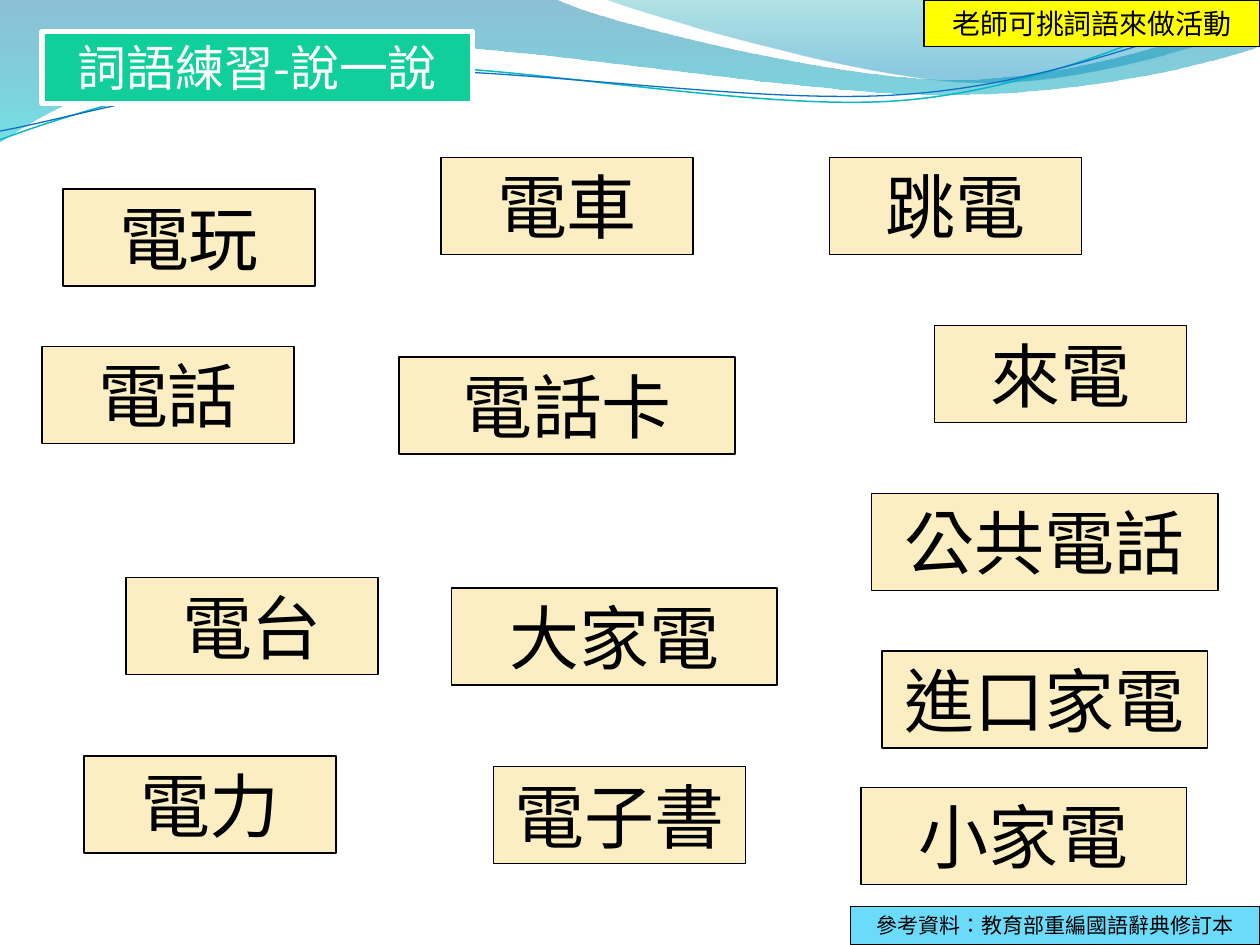
from lxml import etree
from pptx import Presentation
from pptx.dml.color import RGBColor
from pptx.enum.shapes import MSO_SHAPE as Shape
from pptx.enum.text import MSO_ANCHOR as Anchor, MSO_AUTO_SIZE as AutoSize, PP_ALIGN as Align
from pptx.oxml.ns import qn
from pptx.util import Inches, Pt

FONT = "Noto Sans CJK SC"
GRID = 12
CARD_WIDTH = 24
CARD_HEIGHT = 0.77

WAVES = [
    ([(0, 0), (4.4, -0.01), (4.76, 0.17, 6.64, 0.63, 7.58, 0.63),
      (8.53, 0.63, 9.58, 0.26, 10, 0.09), (10.01, 0.36),
      (9.83, 0.44, 8.7, 0.76, 7.46, 0.75), (6.22, 0.75, 3.82, 0.28, 2.57, 0.34),
      (1.29, 0.36, 0.46, 0.83, -0.01, 1.13)],
     [(0, "0074A1", 45), (1, "00C6CF", 55)]),
    ([(4.79, -0.01), (5.09, 0.11, 6.82, 0.62, 7.69, 0.65),
      (8.56, 0.69, 9.61, 0.32, 10, 0.21), (10, 0)],
     [(0, "00A1A9", 30), (0.8, "008BBF", 45)]),
]
STROKES = [
    ([(0, 1.11), (0.48, 0.93, 1.58, 0.57, 2.77, 0.52),
      (3.95, 0.47, 5.93, 0.89, 7.13, 0.8), (8.33, 0.71, 9.38, 0.15, 9.98, -0.02)],
     "0AB8BF", 0.85),
    ([(0, 1.04), (0.47, 0.96, 1.64, 0.61, 2.83, 0.56),
      (4.03, 0.51, 5.97, 0.84, 7.17, 0.75), (8.36, 0.67, 9.41, 0.21, 10, 0.06)],
     "0F6FC6", 0.75),
]
CARDS = [
    ("電力", 8, 72, CARD_WIDTH), ("電台", 12, 55, CARD_WIDTH),
    ("電子書", 47, 73, CARD_WIDTH), ("電玩", 6, 18, CARD_WIDTH),
    ("跳電", 79, 15, CARD_WIDTH), ("來電", 89, 31, CARD_WIDTH),
    ("電車", 42, 15, CARD_WIDTH), ("電話", 4, 33, CARD_WIDTH),
    ("電話卡", 38, 34, 32), ("公共電話", 83, 47, 33), ("進口家電", 84, 62, 31),
]
TITLE = ("詞語練習-說一說", 4, 3, 41, 0.57)
LATE_CARDS = [("小家電", 82, 75, 31), ("大家電", 43, 56, 31)]
NOTE = ("老師可挑詞語來做活動", 88, 0, 32, 0.37)
SOURCE = ("參考資料：教育部重編國語辭典修訂本", 81, 86.35, 39, 0.3)


def color(value):
    return RGBColor.from_string(value)


def add_outline(slide, segments, close):
    points = [(Inches(segment[i]), Inches(segment[i + 1]))
              for segment in segments for i in range(0, len(segment), 2)]
    builder = slide.shapes.build_freeform(*points[0])
    builder.add_line_segments(points[1:], close=close)
    shape = builder.convert_to_shape()
    shape.shadow.inherit = False
    lines = iter(list(shape.element.spPr.iter(qn("a:lnTo"))))
    for segment in segments[1:]:
        first = next(lines)
        if len(segment) == 6:
            first.tag = qn("a:cubicBezTo")
            for _ in range(2):
                extra = next(lines)
                first.append(extra[0])
                extra.getparent().remove(extra)
    return shape


def add_wave(slide, segments, stops):
    shape = add_outline(slide, segments, True)
    shape.line.fill.background()
    shape.fill.gradient()
    shape.fill.gradient_angle = 270
    for stop, (position, value, _) in zip(shape.fill.gradient_stops, stops):
        stop.position = position
        stop.color.rgb = color(value)
    for node, (_, _, opacity) in zip(shape.element.spPr.iter(qn("a:srgbClr")), stops):
        etree.SubElement(node, qn("a:alpha"), val=str(opacity * 1000))


def add_stroke(slide, segments, value, width):
    shape = add_outline(slide, segments, False)
    shape.fill.background()
    shape.line.color.rgb = color(value)
    shape.line.width = Pt(width)


def add_box(slide, text, column, row, columns, height, fill, size, ink="000000",
            border="000000", border_width=0.75):
    left, top, width = (Inches(units / GRID) for units in (column, row, columns))
    shape = slide.shapes.add_shape(Shape.RECTANGLE, left, top, width, Inches(height))
    shape.shadow.inherit = False
    shape.fill.solid()
    shape.fill.fore_color.rgb = color(fill)
    shape.line.color.rgb = color(border)
    shape.line.width = Pt(border_width)
    frame = shape.text_frame
    frame.text = text
    frame.word_wrap = True
    frame.auto_size = AutoSize.NONE
    frame.vertical_anchor = Anchor.MIDDLE
    paragraph = frame.paragraphs[0]
    paragraph.alignment = Align.CENTER
    run = paragraph.runs[0]
    run.font.size = Pt(size)
    run.font.name = FONT
    run.font.color.rgb = color(ink)
    properties = run._r.get_or_add_rPr()
    properties.set("lang", "zh-TW")
    etree.SubElement(properties, qn("a:ea"), typeface=FONT)


def add_cards(slide, cards):
    for card in cards:
        add_box(slide, *card, CARD_HEIGHT, "FAEEC2", 40)


def main():
    """Build the vocabulary practice slide."""
    presentation = Presentation()
    presentation.slide_width, presentation.slide_height = Inches(10), Inches(7.5)
    slide = presentation.slides.add_slide(presentation.slide_layouts[6])
    for wave in WAVES:
        add_wave(slide, *wave)
    for stroke in STROKES:
        add_stroke(slide, *stroke)
    add_cards(slide, CARDS)
    add_box(slide, *TITLE, "10CF9B", 28, "FFFFFF", "FFFFFF", 3)
    add_cards(slide, LATE_CARDS)
    add_box(slide, *NOTE, "FFFF00", 16)
    add_box(slide, *SOURCE, "6BDBFA", 12)
    presentation.save("out.pptx")


if __name__ == "__main__":
    main()
